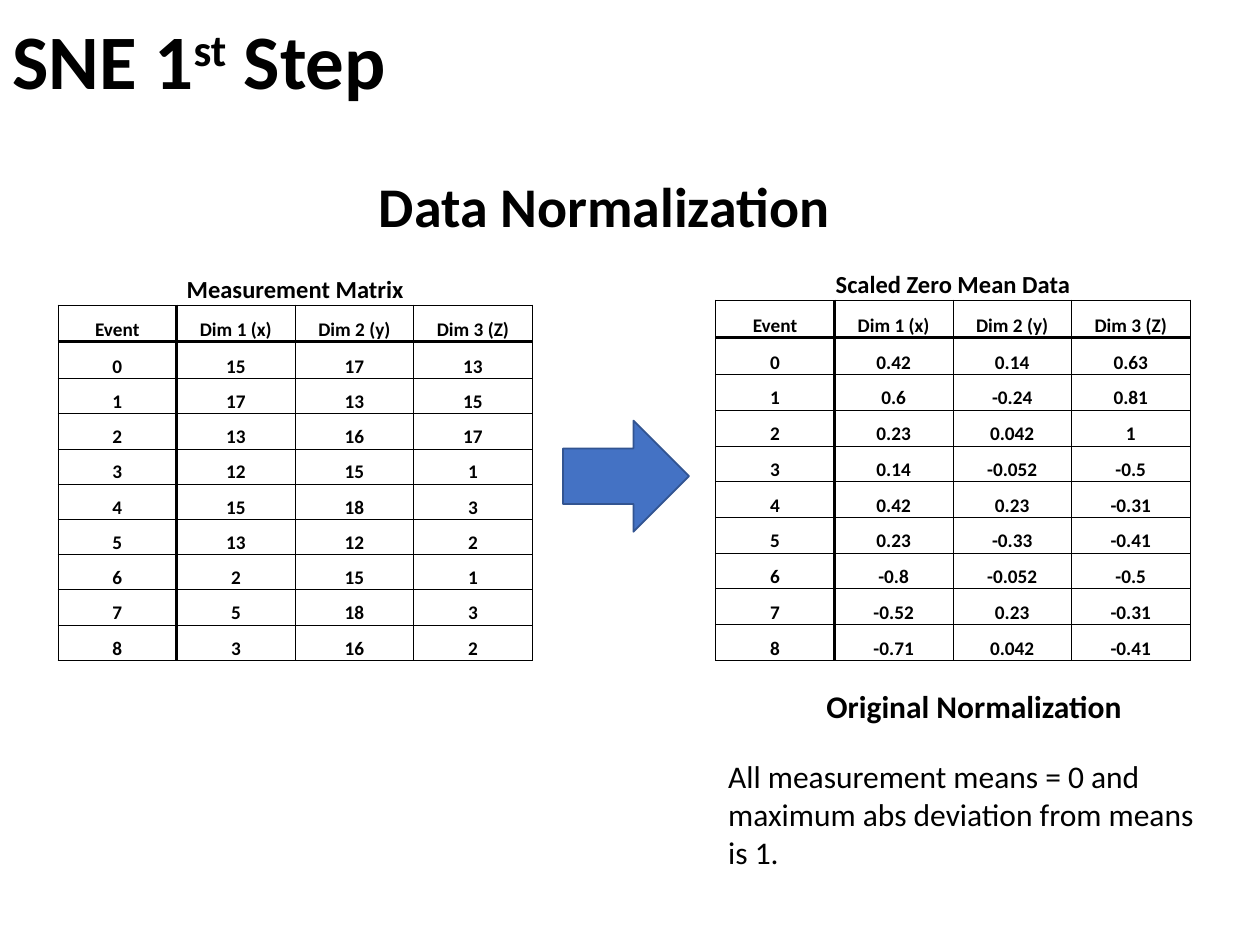
"""Build the SNE first step slide: measurement matrix to scaled zero mean data."""
from dataclasses import dataclass

from lxml import etree
from pptx import Presentation, util as u
from pptx.dml.color import RGBColor
from pptx.enum import shapes, text
from pptx.oxml import ns


@dataclass(frozen=True)
class Theme:
    font: str = "Calibri"
    ink: str = "000000"
    arrow: str = "4472C4"
    arrow_line: str = "325491"
    title: int = 44
    heading: int = 32
    body: int = 18
    caption: int = 14
    cell: int = 11
    thin: float = 0.5
    thick: float = 2


T = Theme()


def style(p, size, bold=True):
    p.font.name, p.font.size, p.font.bold = T.font, u.Pt(size), bold
    p.font.color.rgb = RGBColor.from_string(T.ink)


def set_borders(cell, widths):
    tcPr = cell._tc.get_or_add_tcPr()
    for i, (side, width) in enumerate(zip("LRTB", widths)):
        ln = etree.Element(ns.qn(f"a:ln{side}"), w=str(u.Pt(width)))
        if width:
            fill = etree.SubElement(ln, ns.qn("a:solidFill"))
            etree.SubElement(fill, ns.qn("a:srgbClr"), val=T.ink)
        else:
            etree.SubElement(ln, ns.qn("a:noFill"))
        tcPr.insert(i, ln)


prs = Presentation()
prs.slide_width, prs.slide_height = u.Cm(25.4), u.Cm(19.05)
s = prs.slides.add_slide(prs.slide_layouts[6])

tf = s.shapes.add_textbox(0, 0, u.Cm(21.89), u.Cm(2.59)).text_frame
tf.word_wrap = True
tf.vertical_anchor = text.MSO_ANCHOR.MIDDLE
p = tf.paragraphs[0]
p.line_spacing = 0.9
style(p, T.title)
for part in ("SNE 1", "st", " Step"):
    r = p.add_run()
    r.text = part
    if part == "st":
        r._r.get_or_add_rPr().set("baseline", "30000")

labels = [
    (7.39, 3.33, 9.7, 1.63, T.heading, True, ["Data Normalization"]),
    (14.43, 15.14, 10.01, 2.57, T.body, False,
     ["All measurement means = 0 and", "maximum abs deviation from means", "is 1."]),
    (16.41, 13.72, 6.5, 1.02, T.body, True, ["Original Normalization"]),
]
for x, y, w, h, size, bold, lines in labels:
    tf = s.shapes.add_textbox(u.Cm(x), u.Cm(y), u.Cm(w), u.Cm(h)).text_frame
    tf.word_wrap = False
    tf.text = "\n".join(lines)
    for p in tf.paragraphs:
        style(p, size, bold)

header = ("Event", "Dim 1 (x)", "Dim 2 (y)", "Dim 3 (Z)")
measured = [
    (15, 17, 13), (17, 13, 15), (13, 16, 17), (12, 15, 1), (15, 18, 3),
    (13, 12, 2), (2, 15, 1), (5, 18, 3), (3, 16, 2),
]
scaled = [
    (0.42, 0.14, 0.63), (0.6, -0.24, 0.81), (0.23, 0.042, 1),
    (0.14, -0.052, -0.5), (0.42, 0.23, -0.31), (0.23, -0.33, -0.41),
    (-0.8, -0.052, -0.5), (-0.52, 0.23, -0.31), (-0.71, 0.042, -0.41),
]
tables = [
    ("Measurement Matrix", measured, 1.17, 5.26, 0.74, 0.71),
    ("Scaled Zero Mean Data", scaled, 14.43, 5.16, 0.75, 0.72),
]
for caption, data, x, y, top_height, row_height in tables:
    rows = [(caption, "", "", ""), header]
    rows += [(event, *values) for event, values in enumerate(data)]
    heights = [0.89, top_height, top_height] + [row_height] * (len(rows) - 3)
    tbl = s.shapes.add_table(len(rows), len(header), u.Cm(x), u.Cm(y),
                             u.Cm(9.56), u.Cm(sum(heights))).table
    tbl.first_row = tbl.horz_banding = False
    for col in tbl.columns:
        col.width = u.Cm(2.39)
    for i, (values, height) in enumerate(zip(rows, heights)):
        tbl.rows[i].height = u.Cm(height)
        for j, value in enumerate(values):
            cell = tbl.cell(i, j)
            cell.fill.background()
            cell.margin_left = cell.margin_right = cell.margin_top = u.Cm(0.02)
            cell.margin_bottom = 0
            cell.vertical_anchor = text.MSO_ANCHOR.BOTTOM
            cell.text = str(value)
            p = cell.text_frame.paragraphs[0]
            p.alignment = text.PP_ALIGN.CENTER
            style(p, T.caption if i == 0 else T.cell)
            if i == 0:
                set_borders(cell, (0, 0, 0, T.thin))
            else:
                set_borders(cell, (T.thick if j == 1 else T.thin,
                                   T.thick if j == 0 else T.thin,
                                   T.thick if i == 2 else T.thin,
                                   T.thick if i == 1 else T.thin))
    tbl.cell(0, 0).merge(tbl.cell(0, len(header) - 1))

sp = s.shapes.add_shape(shapes.MSO_SHAPE.RIGHT_ARROW, u.Cm(11.35), u.Cm(8.48),
                        u.Cm(2.54), u.Cm(2.24))
sp.shadow.inherit = False
sp.fill.solid()
sp.fill.fore_color.rgb = RGBColor.from_string(T.arrow)
sp.line.color.rgb = RGBColor.from_string(T.arrow_line)
sp.line.width = u.Pt(1)

prs.save("out.pptx")
